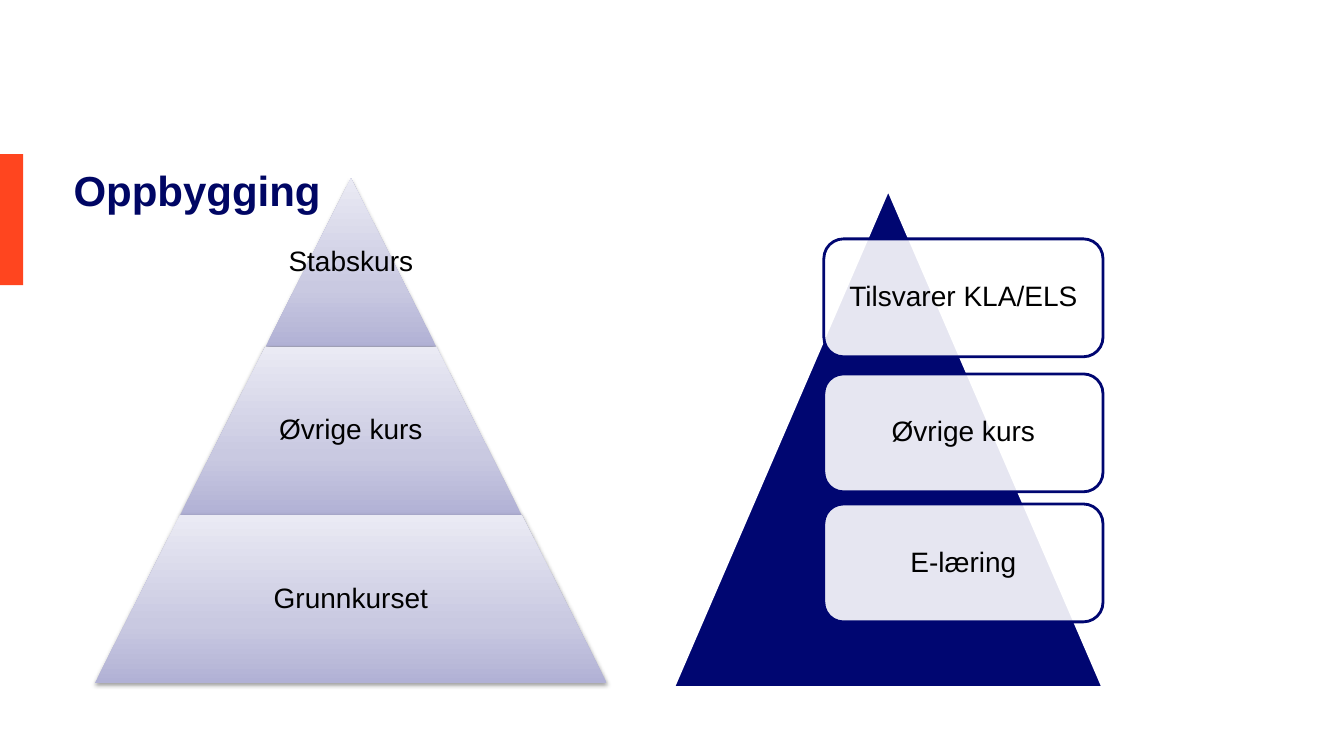
from pptx import Presentation
from pptx.dml.color import RGBColor
from pptx.enum.shapes import MSO_SHAPE
from pptx.enum.text import MSO_ANCHOR, MSO_AUTO_SIZE, PP_ALIGN
from pptx.oxml import parse_xml
from pptx.oxml.ns import nsdecls, qn
from pptx.util import Inches, Pt

NAVY = "000671"
GRADIENT_STOPS = [(0, "B1B1D5"), (35, "C9C9E1"), (100, "EAEAF4")]


def color(value):
    return RGBColor.from_string(value)


def add_shape(slide, kind, left, top, width, height):
    shape = slide.shapes.add_shape(
        kind, Inches(left), Inches(top), Inches(width), Inches(height))
    shape.shadow.inherit = False
    return shape


def fill_solid(shape, value, line=None):
    shape.fill.solid()
    shape.fill.fore_color.rgb = color(value)
    if line:
        shape.line.color.rgb = color(line)
        shape.line.width = Pt(2)
    else:
        shape.line.fill.background()


def set_label(shape, text, margin):
    frame = shape.text_frame
    frame.word_wrap = True
    frame.vertical_anchor = MSO_ANCHOR.MIDDLE
    frame.margin_left = frame.margin_right = Inches(margin)
    frame.margin_top = frame.margin_bottom = Inches(margin)
    paragraph = frame.paragraphs[0]
    paragraph.text = text
    paragraph.alignment = PP_ALIGN.CENTER
    paragraph.line_spacing = 0.9
    paragraph.font.name = "Arial"
    paragraph.font.size = Pt(20)
    paragraph.font.color.rgb = color("000000")


def shade_level(shape):
    shape.line.fill.background()
    shape.fill.gradient()
    shape.fill.gradient_angle = 90
    properties = shape._element.spPr
    stop_list = properties.find(qn("a:gradFill")).find(qn("a:gsLst"))
    for stop in list(stop_list):
        stop_list.remove(stop)
    for position, value in GRADIENT_STOPS:
        stop_list.append(parse_xml(
            f'<a:gs {nsdecls("a")} pos="{position * 1000}">'
            f'<a:srgbClr val="{value}"/></a:gs>'))
    properties.find(qn("a:effectLst")).append(parse_xml(
        f'<a:outerShdw {nsdecls("a")} blurRad="{Pt(3.1)}" dist="{Pt(1.6)}" '
        'dir="5400000" rotWithShape="0"><a:srgbClr val="000000">'
        '<a:alpha val="38000"/></a:srgbClr></a:outerShdw>'))


def add_heading(slide, text, left, top, width, height):
    bar = add_shape(slide, MSO_SHAPE.RECTANGLE, 0, 1.53, 0.23, 1.3)
    fill_solid(bar, "FF451F")
    title = slide.shapes.title
    title.left, title.top = Inches(left), Inches(top)
    title.width, title.height = Inches(width), Inches(height)
    frame = title.text_frame
    frame.auto_size = MSO_AUTO_SIZE.NONE
    frame.vertical_anchor = MSO_ANCHOR.MIDDLE
    paragraph = frame.paragraphs[0]
    paragraph.text = text
    paragraph.alignment = PP_ALIGN.LEFT
    paragraph.font.name = "Arial"
    paragraph.font.size = Pt(30)
    paragraph.font.bold = True
    paragraph.font.color.rgb = color("000664")


def add_triangle_list(slide, labels, left, top, width, height):
    triangle = add_shape(slide, MSO_SHAPE.ISOSCELES_TRIANGLE, left, top, width, height)
    fill_solid(triangle, NAVY, "FFFFFF")
    for label, offset in labels:
        card = add_shape(slide, MSO_SHAPE.ROUNDED_RECTANGLE,
                         left + 0.35 * width, top + offset, 0.65 * width, 1.17)
        fill_solid(card, "FFFFFF", NAVY)
        fill_color = card._element.spPr.find(qn("a:solidFill"))[0]
        fill_color.append(parse_xml(f'<a:alpha {nsdecls("a")} val="90000"/>'))
        set_label(card, label, 0.08)


def add_pyramid(slide, labels, left, top, width, height):
    level_height = height / len(labels)
    step = width / len(labels)
    for index, label in enumerate(labels):
        level_width = step * (index + 1)
        level_left = left + (width - level_width) / 2
        level_top = top + level_height * index
        level = add_shape(slide, MSO_SHAPE.TRAPEZOID,
                          level_left, level_top, level_width, level_height)
        level.adjustments[0] = step / 2 / level_height
        shade_level(level)
        text_width = max(step, 0.65 * level_width)
        box = slide.shapes.add_textbox(
            Inches(left + (width - text_width) / 2), Inches(level_top),
            Inches(text_width), Inches(level_height))
        set_label(box, label, 0.03)


def main():
    presentation = Presentation()
    presentation.slide_width = Inches(13.33)
    presentation.slide_height = Inches(7.5)
    slide = presentation.slides.add_slide(presentation.slide_layouts[5])
    add_heading(slide, "Oppbygging", 0.63, 1.43, 3.54, 0.9)
    add_triangle_list(
        slide, [("Tilsvarer KLA/ELS", 0.49), ("Øvrige kurs", 1.83), ("E-læring", 3.12)],
        6.68, 1.88, 4.26, 4.94)
    add_pyramid(slide, ["Stabskurs", "Øvrige kurs", "Grunnkurset"], 0.94, 1.77, 5.08, 5.01)
    presentation.save("out.pptx")


if __name__ == "__main__":
    main()
